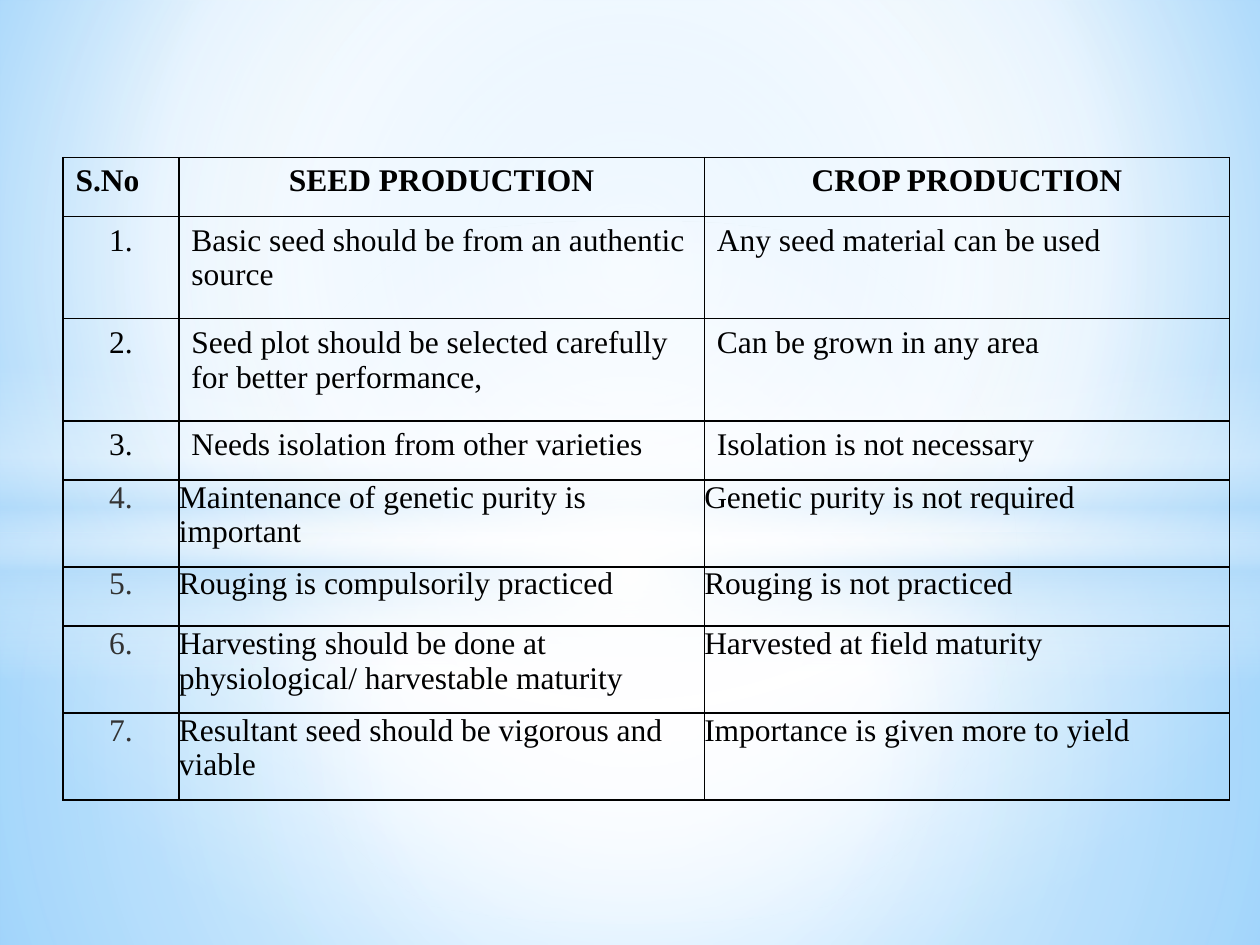
from pptx import Presentation
from pptx.dml.color import RGBColor
from pptx.enum.shapes import MSO_SHAPE
from pptx.enum.text import PP_ALIGN
from pptx.oxml import parse_xml
from pptx.oxml.ns import nsdecls, qn
from pptx.util import Inches, Pt

BLACK = RGBColor(0x00, 0x00, 0x00)
GRAY = RGBColor(0x33, 0x33, 0x33)
WHITE = RGBColor(0xFF, 0xFF, 0xFF)
SKY = RGBColor(0xB4, 0xDC, 0xFA)
PALE = RGBColor(0x9E, 0xD5, 0xFF)
BLUE = RGBColor(0x5B, 0xB9, 0xFF)
FONT = "Times New Roman"

HEADS = ["S.No", "SEED PRODUCTION", "CROP PRODUCTION"]
PAIRS = [
    ("Basic seed should be from an authentic source", "Any seed material can be used"),
    ("Seed plot should be selected carefully for better performance,",
     "Can be grown in any area"),
    ("Needs isolation from other varieties", "Isolation is not necessary"),
    ("Maintenance of genetic purity is important", "Genetic purity is not required"),
    ("Rouging is compulsorily practiced", "Rouging is not practiced"),
    ("Harvesting should be done at physiological/ harvestable maturity",
     "Harvested at field maturity"),
    ("Resultant seed should be vigorous and viable", "Importance is given more to yield"),
]
WIDTHS = [0.92, 4.17, 4.17]
HEIGHTS = [0.47, 0.81, 0.81, 0.47, 0.69, 0.47, 0.69, 0.69]
FLUSH = 4

BACK = [(0, PALE, 100), (60, WHITE, 100), (100, BLUE, 100)]
MID = (50, 50, 50, 50)
GLOWS = [
    (MSO_SHAPE.RECTANGLE, (0, 4.23, 10, 3.27), MID,
     [(0, WHITE, 91), (37, WHITE, 76), (100, SKY, 79)]),
    (MSO_SHAPE.RECTANGLE, (0, 0, 10, 4.23), MID,
     [(0, WHITE, 89), (48, WHITE, 62), (100, SKY, 79)]),
    (MSO_SHAPE.RECTANGLE, (0, 2.9, 10, 2.5), None,
     [(0, WHITE, 0), (29, WHITE, 30), (45, SKY, 40), (55, WHITE, 26),
      (65, SKY, 60), (100, WHITE, 0)]),
    (MSO_SHAPE.OVAL, (0, 1.75, 10, 5.58), MID,
     [(0, WHITE, 100), (54, WHITE, 0)]),
]


def blend(fill, root, stops, focus=None):
    fill.gradient()
    old = next(root.iter(qn("a:gradFill")))
    marks = "".join(
        f'<a:gs pos="{pos * 1000}"><a:srgbClr val="{color}">'
        f'<a:alpha val="{alpha * 1000}"/></a:srgbClr></a:gs>'
        for pos, color, alpha in stops)
    if focus:
        sides = " ".join(f'{side}="{val * 1000}"' for side, val in zip("ltrb", focus))
        way = f'<a:path path="circle"><a:fillToRect {sides}/></a:path>'
    else:
        way = '<a:lin ang="5400000" scaled="0"/>'
    new = parse_xml(f'<a:gradFill {nsdecls("a")} rotWithShape="1">'
                    f'<a:gsLst>{marks}</a:gsLst>{way}</a:gradFill>')
    old.getparent().replace(old, new)


def write(cell, text, color=BLACK, bold=False, align=PP_ALIGN.LEFT, flush=False):
    if flush:
        cell.margin_left = cell.margin_right = 0
        cell.margin_top = cell.margin_bottom = 0
    para = cell.text_frame.paragraphs[0]
    para.alignment = align
    run = para.add_run()
    run.text = text
    run.font.name = FONT
    run.font.size = Pt(18)
    run.font.bold = bold
    run.font.color.rgb = color


def frame(cell):
    cell.fill.background()
    props = cell._tc.get_or_add_tcPr()
    for spot, side in enumerate("LRTB"):
        props.insert(spot, parse_xml(
            f'<a:ln{side} {nsdecls("a")} w="{Pt(1)}"><a:solidFill>'
            f'<a:srgbClr val="{BLACK}"/></a:solidFill></a:ln{side}>'))


def main():
    deck = Presentation()
    deck.slide_width, deck.slide_height = Inches(10), Inches(7.5)
    slide = deck.slides.add_slide(deck.slide_layouts[6])
    blend(slide.background.fill, slide._element, BACK, (20, 10, 20, 60))

    for kind, box, focus, stops in GLOWS:
        glow = slide.shapes.add_shape(kind, *map(Inches, box))
        glow.shadow.inherit = False
        glow.line.fill.background()
        blend(glow.fill, glow._element, stops, focus)

    rows = [HEADS] + [(f"{num}.", *pair) for num, pair in enumerate(PAIRS, 1)]
    table = slide.shapes.add_table(
        len(rows), len(HEADS), Inches(0.5), Inches(1.25),
        Inches(sum(WIDTHS)), Inches(sum(HEIGHTS))).table
    table.first_row = table.horz_banding = False
    for col, width in zip(table.columns, WIDTHS):
        col.width = Inches(width)
    for row, height in zip(table.rows, HEIGHTS):
        row.height = Inches(height)

    for r, row in enumerate(rows):
        for c, text in enumerate(row):
            cell = table.cell(r, c)
            flush = r >= FLUSH
            mid = (r == 0) != (c == 0)
            write(cell, text, bold=r == 0, flush=flush,
                  color=GRAY if flush and c == 0 else BLACK,
                  align=PP_ALIGN.CENTER if mid else PP_ALIGN.LEFT)
            frame(cell)

    deck.save("out.pptx")


if __name__ == "__main__":
    main()
